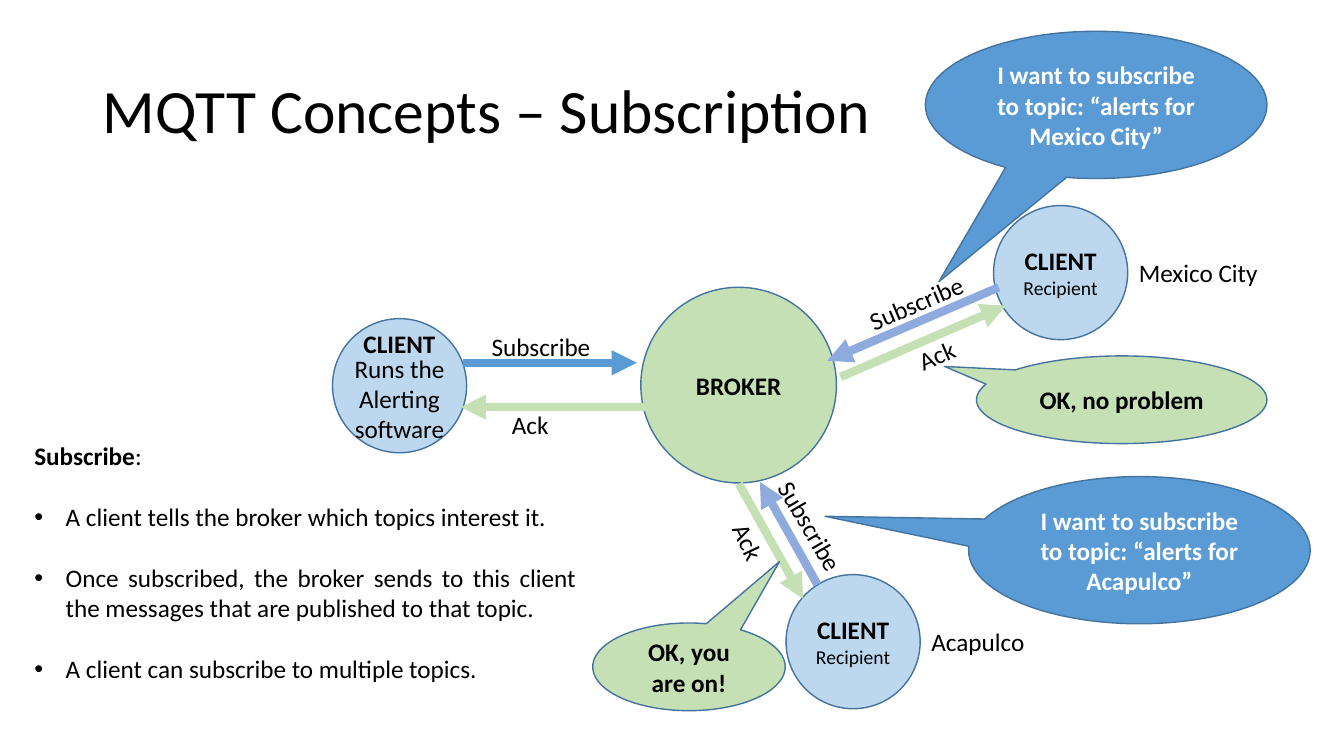
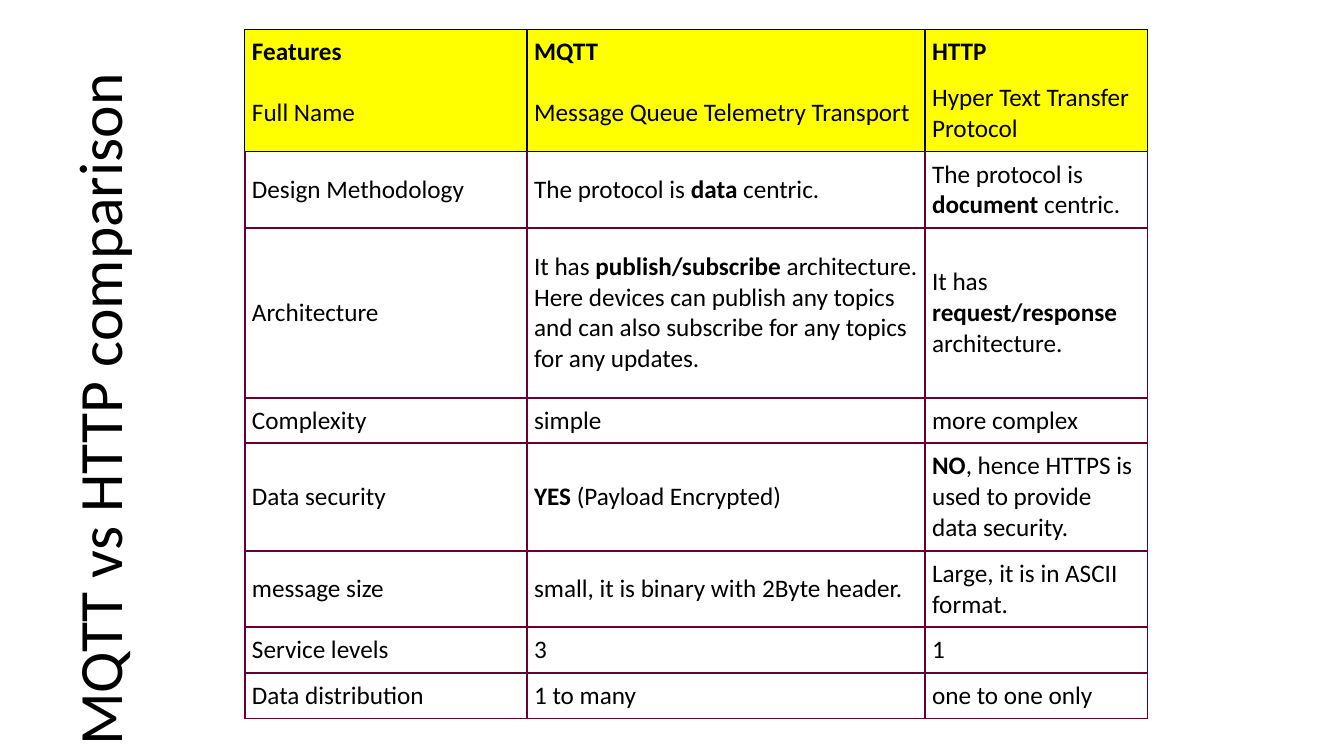
"""Build two slides on MQTT: how subscription works, and a comparison with HTTP."""
from lxml import etree
from pptx import Presentation
from pptx.dml.color import RGBColor
from pptx.enum.shapes import MSO_CONNECTOR, MSO_SHAPE
from pptx.enum.text import MSO_ANCHOR, MSO_AUTO_SIZE, PP_ALIGN
from pptx.oxml.ns import qn
from pptx.util import Cm, Pt

ELLIPSE, CALLOUT = MSO_SHAPE.OVAL, MSO_SHAPE.OVAL_CALLOUT
STRAIGHT = MSO_CONNECTOR.STRAIGHT
TOP, MIDDLE = MSO_ANCHOR.TOP, MSO_ANCHOR.MIDDLE
LEFT, CENTER, JUSTIFY = PP_ALIGN.LEFT, PP_ALIGN.CENTER, PP_ALIGN.JUSTIFY
NO_FIT = MSO_AUTO_SIZE.NONE

FONT = "Calibri"
COLORS = {
    "text": "000000",
    "light_text": "FFFFFF",
    "outline": "43739E",
    "broker": "C5E0B4",
    "client": "BDD7EE",
    "request": "5B9BD5",
    "recipient_request": "8FAADC",
    "header": "FFFF00",
    "cell": "FFFFFF",
    "header_border": "000000",
    "border": "660033",
}
CLIENT_SIZE = 3.38
LABEL_HEIGHT = 1.02
LABEL_WIDTHS = {"Subscribe": 3.02, "Ack": 1.45, "Mexico City": 3.53, "Acapulco": 2.9}

MESSAGES = [
    ("Subscribe", "request", (11.68, 9.14), (16.05, 9.14), (12.14, 8.23), 0),
    ("Ack", "broker", (16.28, 10.26), (11.61, 10.26), (12.65, 10.19), 0),
    ("Subscribe", "recipient_request", (25.17, 7.24), (20.85, 9.09), (21.59, 7.11), 336.9),
    ("Ack", "broker", (21.18, 9.5), (25.35, 7.7), (22.89, 8.43), 336.9),
    ("Subscribe", "recipient_request", (20.6, 14.73), (19.15, 12.14), (18.92, 12.75), 59.6),
    ("Ack", "broker", (18.62, 12.19), (20.24, 15.09), (18.14, 13.16), 64.8),
]
CALLOUTS = [
    ("I want to subscribe to topic: “alerts for Mexico City”", "request", "light_text",
     (23.32, 0.79, 8.61, 3.71), (-0.46, 1.2)),
    ("OK, no problem", "broker", "text", (24.61, 8.97, 7.32, 2.21), (-0.61, -0.38)),
    ("I want to subscribe to topic: “alerts for Acapulco”", "request", "light_text",
     (24.41, 12.01, 8.61, 3.71), (-0.92, -0.23)),
    ("OK, you are on!", "broker", "text", (14.94, 15.7, 4.85, 2.21), (0.47, -1.2)),
]
SUBSCRIBE_POINTS = [
    "*Subscribe*:",
    "A client tells the broker which topics interest it.",
    "Once subscribed, the broker sends to this client the messages that are published to that topic.",
    "A client can subscribe to multiple topics.",
]
HEADER_ROWS = 2
COLUMN_WIDTHS = (7.11, 10.03, 5.61)
COMPARISON = [
    (1, "*Features*", "*MQTT*", "*HTTP*"),
    (2, "Full Name", "Message Queue Telemetry Transport", "Hyper Text Transfer Protocol"),
    (2, "Design Methodology", "The protocol is *data* centric.",
     "The protocol is *document* centric."),
    (5, "Architecture",
     "It has *publish/subscribe* architecture. Here devices can publish any topics "
     "and can also subscribe for any topics for any updates.",
     "It has *request/response* architecture."),
    (1, "Complexity", "simple", "more complex"),
    (3, "Data security", "*YES* (Payload Encrypted)",
     "*NO*, hence HTTPS is used to provide data security."),
    (2, "message size", "small, it is binary with 2Byte header.",
     "Large, it is in ASCII format."),
    (1, "Service levels", "3", "1"),
    (1, "Data distribution", "1 to many", "one to one only"),
]


def rgb(name):
    """Return the named colour."""
    return RGBColor.from_string(COLORS[name])


def cm(lengths):
    """Turn numbers into centimetre lengths."""
    return [Cm(length) for length in lengths]


def place(shape, box):
    """Set position and size of a shape."""
    shape.left, shape.top, shape.width, shape.height = cm(box)


def write(paragraph, marked, size=18, color="text", align=LEFT):
    """Write text into a paragraph, with the parts between asterisks in bold."""
    paragraph.alignment = align
    for index, part in enumerate(marked.split("*")):
        if part:
            run = paragraph.add_run()
            run.text = part
            run.font.name, run.font.size = FONT, Pt(size)
            run.font.bold = index % 2 == 1
            run.font.color.rgb = rgb(color)


def set_title(slide, text, box, rotation=0):
    """Fill and place the title placeholder."""
    title = slide.shapes.title
    place(title, box)
    title.rotation = rotation
    frame = title.text_frame
    frame.auto_size, frame.vertical_anchor = NO_FIT, MIDDLE
    write(frame.paragraphs[0], text, size=44)
    frame.paragraphs[0].line_spacing = 0.9


def set_points(slide, points, box):
    """Fill the body placeholder with a heading and its bullets."""
    body = slide.placeholders[1]
    place(body, box)
    frame = body.text_frame
    frame.auto_size, frame.vertical_anchor = NO_FIT, TOP
    for index, point in enumerate(points):
        paragraph = frame.add_paragraph() if index else frame.paragraphs[0]
        write(paragraph, point, align=JUSTIFY)
        paragraph.line_spacing = 1.0
        paragraph.space_before = Pt(22 if index else 0)
        indent = Cm(0.79) if index else 0
        properties = paragraph._p.get_or_add_pPr()
        properties.set("marL", str(indent))
        properties.set("indent", str(-indent))
        if not index:
            etree.SubElement(properties, qn("a:buNone"))


def add_bubble(slide, preset, box, fill, lines, color="text"):
    """Add an outlined round shape with centred (text, size) lines."""
    bubble = slide.shapes.add_shape(preset, *cm(box))
    bubble.shadow.inherit = False
    bubble.fill.solid()
    bubble.fill.fore_color.rgb = rgb(fill)
    bubble.line.color.rgb = rgb("outline")
    bubble.line.width = Pt(1)
    frame = bubble.text_frame
    frame.word_wrap, frame.vertical_anchor = True, MIDDLE
    for index, (text, size) in enumerate(lines):
        paragraph = frame.add_paragraph() if index else frame.paragraphs[0]
        write(paragraph, text, size, color, CENTER)
    return bubble


def add_client(slide, left, top, *details):
    """Add a client circle with its details below the heading."""
    box = (left, top, CLIENT_SIZE, CLIENT_SIZE)
    return add_bubble(slide, ELLIPSE, box, "client", [("*CLIENT*", 18), *details])


def add_callout(slide, text, fill, color, box, tip):
    """Add a speech bubble whose tail ends at the tip."""
    callout = add_bubble(slide, CALLOUT, box, fill, [(f"*{text}*", 18)], color)
    callout.adjustments[0], callout.adjustments[1] = tip


def add_label(slide, text, position, rotation=0):
    """Add a one-line label."""
    label = slide.shapes.add_textbox(*cm((*position, LABEL_WIDTHS[text], LABEL_HEIGHT)))
    label.rotation = rotation
    label.text_frame.word_wrap = False
    write(label.text_frame.paragraphs[0], text)


def add_message(slide, text, color, start, end, label_position, rotation):
    """Add a thick arrow and its label."""
    arrow = slide.shapes.add_connector(STRAIGHT, *cm((*start, *end)))
    arrow.line.color.rgb = rgb(color)
    arrow.line.width = Pt(6)
    etree.SubElement(arrow.line._get_or_add_ln(), qn("a:tailEnd"), type="triangle")
    etree.SubElement(arrow._element.spPr, qn("a:effectLst"))
    add_label(slide, text, label_position, rotation)


def set_borders(cell, borders):
    """Draw (colour, width) borders left, right, top and bottom; None hides one."""
    properties = cell._tc.get_or_add_tcPr()
    for index, (side, border) in enumerate(zip("LRTB", borders)):
        line = etree.Element(qn(f"a:ln{side}"))
        if border:
            color, width = border
            line.set("w", str(Pt(width)))
            fill = etree.SubElement(line, qn("a:solidFill"))
            etree.SubElement(fill, qn("a:srgbClr"), val=COLORS[color])
        else:
            etree.SubElement(line, qn("a:noFill"))
        properties.insert(index, line)


def row_borders(row):
    """Return the four borders of the cells in a row."""
    black, plum = ("header_border", 1), ("border", 1.5)
    side = black if row < HEADER_ROWS else plum
    edges = {0: black, 1: None, HEADER_ROWS: black}
    return side, side, edges.get(row, plum), edges.get(row + 1, plum)


def add_comparison(slide, left, top):
    """Add the comparison table, each row as high as its lines need."""
    heights = [0.78 * row[0] + 0.37 for row in COMPARISON]
    box = cm((left, top, sum(COLUMN_WIDTHS), sum(heights)))
    table = slide.shapes.add_table(len(COMPARISON), len(COLUMN_WIDTHS), *box).table
    table.first_row = table.horz_banding = False
    for column, width in zip(table.columns, COLUMN_WIDTHS):
        column.width = Cm(width)
    for index, (_, *texts) in enumerate(COMPARISON):
        table.rows[index].height = Cm(heights[index])
        for cell, text in zip(table.rows[index].cells, texts):
            cell.margin_left = cell.margin_right = Cm(0.18)
            cell.margin_top = cell.margin_bottom = Cm(0.18)
            cell.vertical_anchor = MIDDLE
            cell.fill.solid()
            cell.fill.fore_color.rgb = rgb("header" if index < HEADER_ROWS else "cell")
            write(cell.text_frame.paragraphs[0], text)
            set_borders(cell, row_borders(index))


def build_subscription(slide):
    """Draw the broker, its clients and their messages."""
    set_title(slide, "MQTT Concepts – Subscription", (2.34, 1.02, 20.88, 3.68))
    set_points(slide, SUBSCRIBE_POINTS, (0.61, 10.97, 14.17, 6.4))
    add_bubble(slide, ELLIPSE, (16.15, 7.24, 4.93, 4.93), "broker", [("*BROKER*", 18)])
    sender = add_client(slide, 8.38, 8.03, ("Runs the", 18), ("Alerting", 18), ("software", 18))
    sender.text_frame.word_wrap = False
    sender.text_frame.paragraphs[1].line_spacing = 0.82
    add_client(slide, 19.81, 14.48, ("Recipient", 14))
    add_client(slide, 25.04, 5.18, ("Recipient", 14))
    for message in MESSAGES:
        add_message(slide, *message)
    for callout in CALLOUTS:
        add_callout(slide, *callout)
    add_label(slide, "Mexico City", (28.45, 6.35))
    add_label(slide, "Acapulco", (23.22, 15.65))


def build_comparison(slide):
    """Set the table beside its upright title."""
    add_comparison(slide, 6.17, 0.74)
    set_title(slide, "MQTT vs HTTP comparison", (-6.58, 8.05, 18.31, 3.68), 270)


def main():
    """Build and save the presentation."""
    presentation = Presentation()
    presentation.slide_width, presentation.slide_height = Cm(33.87), Cm(19.05)
    content, title_only = presentation.slide_layouts[1], presentation.slide_layouts[5]
    build_subscription(presentation.slides.add_slide(content))
    build_comparison(presentation.slides.add_slide(title_only))
    presentation.save("out.pptx")


if __name__ == "__main__":
    main()
